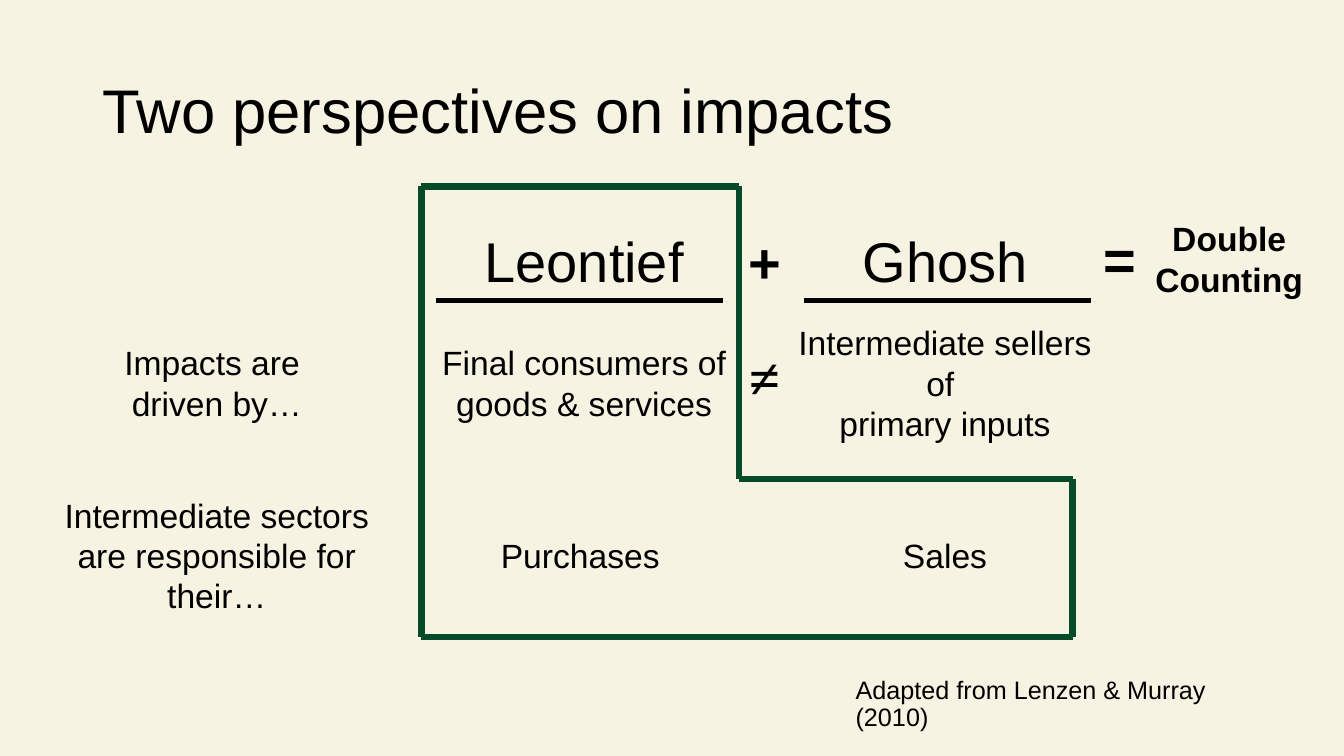
"""Build the slide comparing the Leontief and Ghosh perspectives on impacts."""
from dataclasses import dataclass

import lxml.etree
import pptx
import pptx.dml.color
import pptx.enum.shapes
import pptx.enum.text
import pptx.oxml.ns
import pptx.slide
import pptx.text.text
import pptx.util

Pt = pptx.util.Pt
CREAM = pptx.dml.color.RGBColor(0xF7, 0xF3, 0xE3)
BLACK = pptx.dml.color.RGBColor(0x00, 0x00, 0x00)
GREEN = pptx.dml.color.RGBColor(0x05, 0x4A, 0x29)
CENTER = pptx.enum.text.PP_ALIGN.CENTER
LEFT = pptx.enum.text.PP_ALIGN.LEFT

LABEL_LEFT, LABEL_WIDTH = 31.7, 246.2
LEONTIEF_LEFT, GHOSH_LEFT, COLUMN_WIDTH = 303.8, 561.6, 226.8
HEADING_TOP, DRIVERS_TOP, ROLES_TOP, ROW_HEIGHT = 146.9, 234, 357.1, 78.5
OPERATOR_WIDTH, OPERATOR_HEIGHT = 124.6, 88.6
RULE_INSET, RULE_WIDTH, RULE_TOP = 13, 204.4, 214.6
FRAME_LEFT, FRAME_STEP, FRAME_RIGHT = 301, 527.8, 766.1
FRAME_TOP, FRAME_SHELF, FRAME_BOTTOM = 133.2, 342, 455


@dataclass(frozen=True)
class Label:
    """A text box with its place and lettering."""

    text: str
    left: float
    top: float
    width: float = COLUMN_WIDTH
    height: float = ROW_HEIGHT
    size: float = 24
    bold: bool = False
    font: str = "Arial"
    alignment: pptx.enum.text.PP_ALIGN = CENTER
    line_spacing: float = 1.0
    has_margins: bool = True


def operator(symbol: str, left: float, top: float, font: str = "Arial") -> Label:
    """Describe a large symbol standing between two columns."""
    return Label(symbol, left, top, OPERATOR_WIDTH, OPERATOR_HEIGHT, size=40, bold=True,
                 font=font, line_spacing=0.9, has_margins=False)


LABELS = [
    Label("Leontief", LEONTIEF_LEFT, HEADING_TOP, size=40),
    Label("Ghosh", GHOSH_LEFT, HEADING_TOP, size=40),
    Label("Adapted from Lenzen & Murray (2010)", 604.1, 487.4, 290.2, 31.7, size=18,
          alignment=LEFT, line_spacing=0.9),
    Label("Impacts are \vdriven by…", LABEL_LEFT, DRIVERS_TOP, LABEL_WIDTH),
    Label("Intermediate sectors are responsible for their…", LABEL_LEFT, ROLES_TOP,
          LABEL_WIDTH),
    Label("Final consumers of goods & services", LEONTIEF_LEFT, DRIVERS_TOP),
    Label("Intermediate sellers of \vprimary inputs", GHOSH_LEFT, DRIVERS_TOP),
    Label("Purchases", FRAME_LEFT, ROLES_TOP),
    Label("Sales", GHOSH_LEFT, ROLES_TOP),
    operator("+", 483.8, 145.4),
    operator("=", 737.3, 143.3),
    operator("≠", 483.8, 227.5, "Times New Roman"),
    Label("Double\vCounting", 804.2, 145.4, 147.6, bold=True),
]

FRAME_CORNERS = [
    (FRAME_LEFT, FRAME_TOP), (FRAME_STEP, FRAME_TOP), (FRAME_STEP, FRAME_SHELF),
    (FRAME_RIGHT, FRAME_SHELF), (FRAME_RIGHT, FRAME_BOTTOM), (FRAME_LEFT, FRAME_BOTTOM),
]


def format_text(text_frame: pptx.text.text.TextFrame, label: Label) -> None:
    """Fill a text frame and apply the lettering of its label."""
    text_frame.text = label.text
    text_frame.word_wrap = True
    text_frame.auto_size = pptx.enum.text.MSO_AUTO_SIZE.NONE
    text_frame.vertical_anchor = pptx.enum.text.MSO_ANCHOR.MIDDLE
    if not label.has_margins:
        text_frame.margin_left = text_frame.margin_right = Pt(0)
        text_frame.margin_top = text_frame.margin_bottom = Pt(0)
    for paragraph in text_frame.paragraphs:
        paragraph.alignment = label.alignment
        paragraph.line_spacing = label.line_spacing
        for run in paragraph.runs:
            run.font.name = label.font
            run.font.size = Pt(label.size)
            run.font.bold = label.bold
            run.font.color.rgb = BLACK


def add_title(slide: pptx.slide.Slide, label: Label) -> None:
    """Place and format the title placeholder."""
    title = slide.shapes.title
    title.left, title.top = Pt(label.left), Pt(label.top)
    title.width, title.height = Pt(label.width), Pt(label.height)
    format_text(title.text_frame, label)


def add_label(slide: pptx.slide.Slide, label: Label) -> None:
    """Add a text box."""
    shape = slide.shapes.add_textbox(
        Pt(label.left), Pt(label.top), Pt(label.width), Pt(label.height))
    format_text(shape.text_frame, label)


def add_line(slide: pptx.slide.Slide, start: tuple[float, float], end: tuple[float, float],
             color: pptx.dml.color.RGBColor, weight: float) -> None:
    """Add a straight line without a shadow."""
    connector = slide.shapes.add_connector(
        pptx.enum.shapes.MSO_CONNECTOR.STRAIGHT,
        Pt(start[0]), Pt(start[1]), Pt(end[0]), Pt(end[1]))
    connector.line.color.rgb = color
    connector.line.width = Pt(weight)
    lxml.etree.SubElement(connector._element.spPr, pptx.oxml.ns.qn("a:effectLst"))


def main() -> None:
    """Create and save the presentation."""
    presentation = pptx.Presentation()
    presentation.slide_width, presentation.slide_height = Pt(960), Pt(540)
    slide = presentation.slides.add_slide(presentation.slide_layouts.get_by_name("Title Only"))
    slide.background.fill.solid()
    slide.background.fill.fore_color.rgb = CREAM

    add_title(slide, Label("Two perspectives on impacts", 66, 28.8, 828, 104.4, size=44,
                           alignment=LEFT, line_spacing=0.9))
    for label in LABELS:
        add_label(slide, label)
    for column_left in (LEONTIEF_LEFT, GHOSH_LEFT):
        rule_left = column_left + RULE_INSET - (5 if column_left == LEONTIEF_LEFT else 0)
        add_line(slide, (rule_left, RULE_TOP), (rule_left + RULE_WIDTH, RULE_TOP), BLACK, 3)
    for start, end in zip(FRAME_CORNERS, FRAME_CORNERS[1:] + FRAME_CORNERS[:1]):
        add_line(slide, start, end, GREEN, 4.5)


    presentation.save("out.pptx")


if __name__ == "__main__":
    main()
